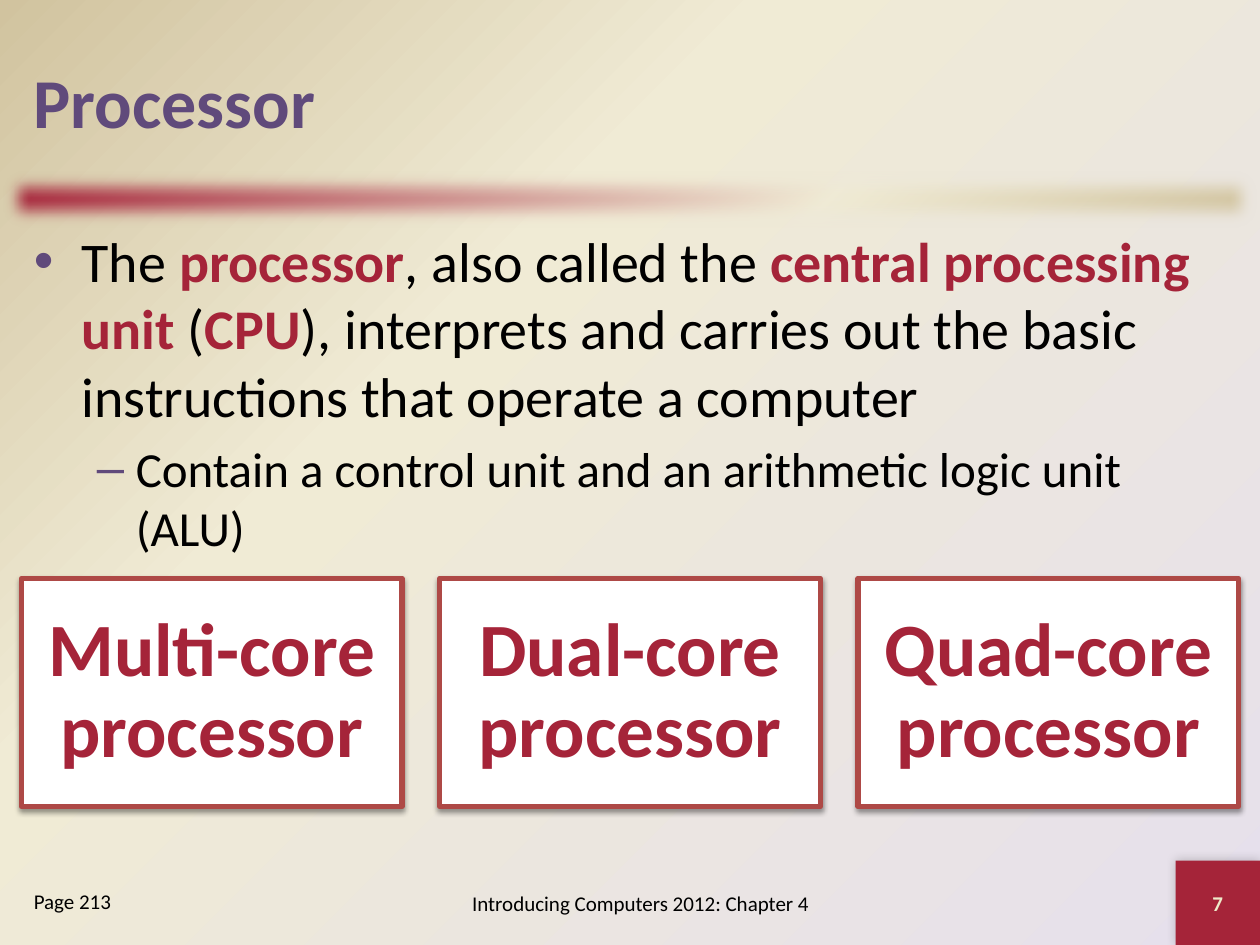
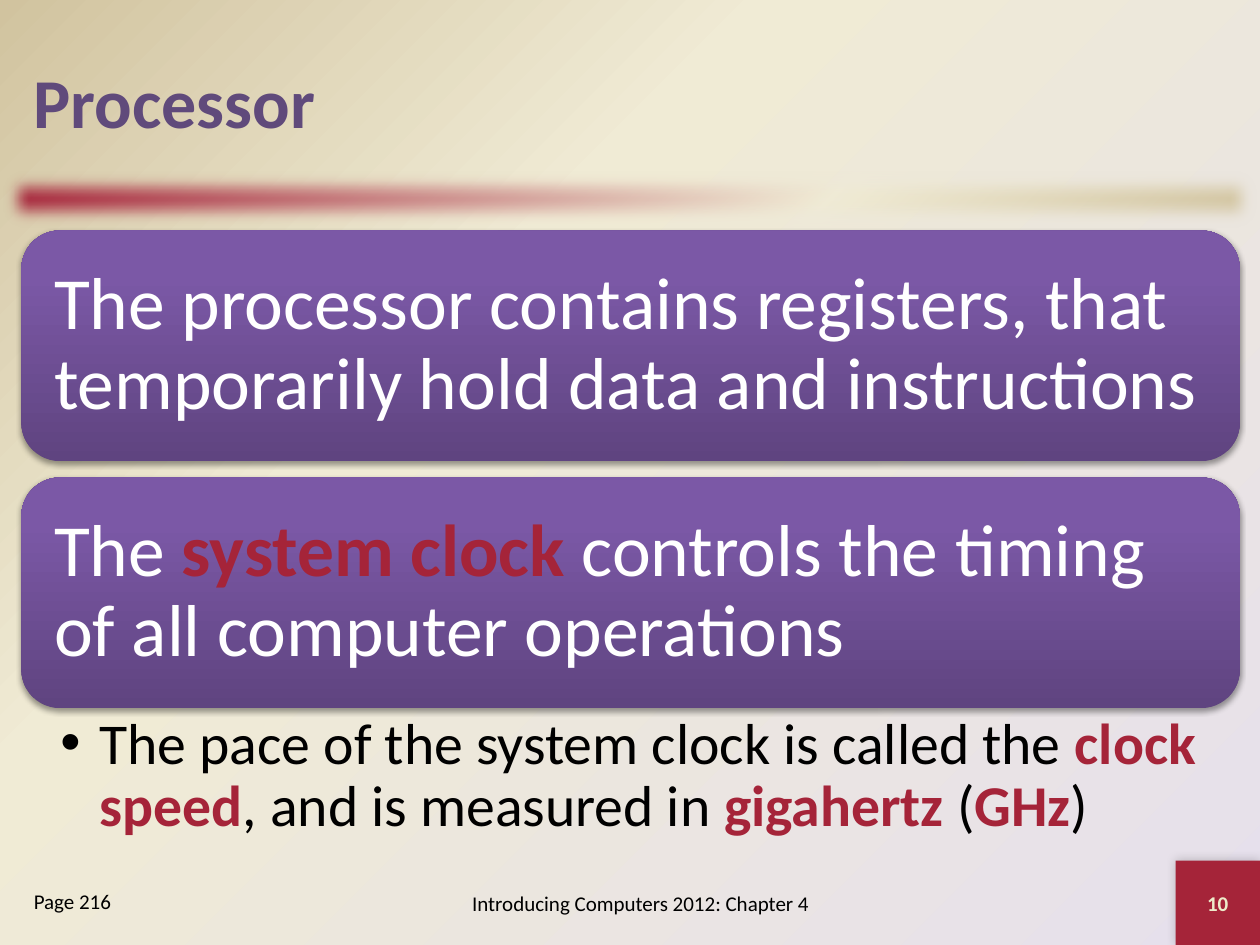
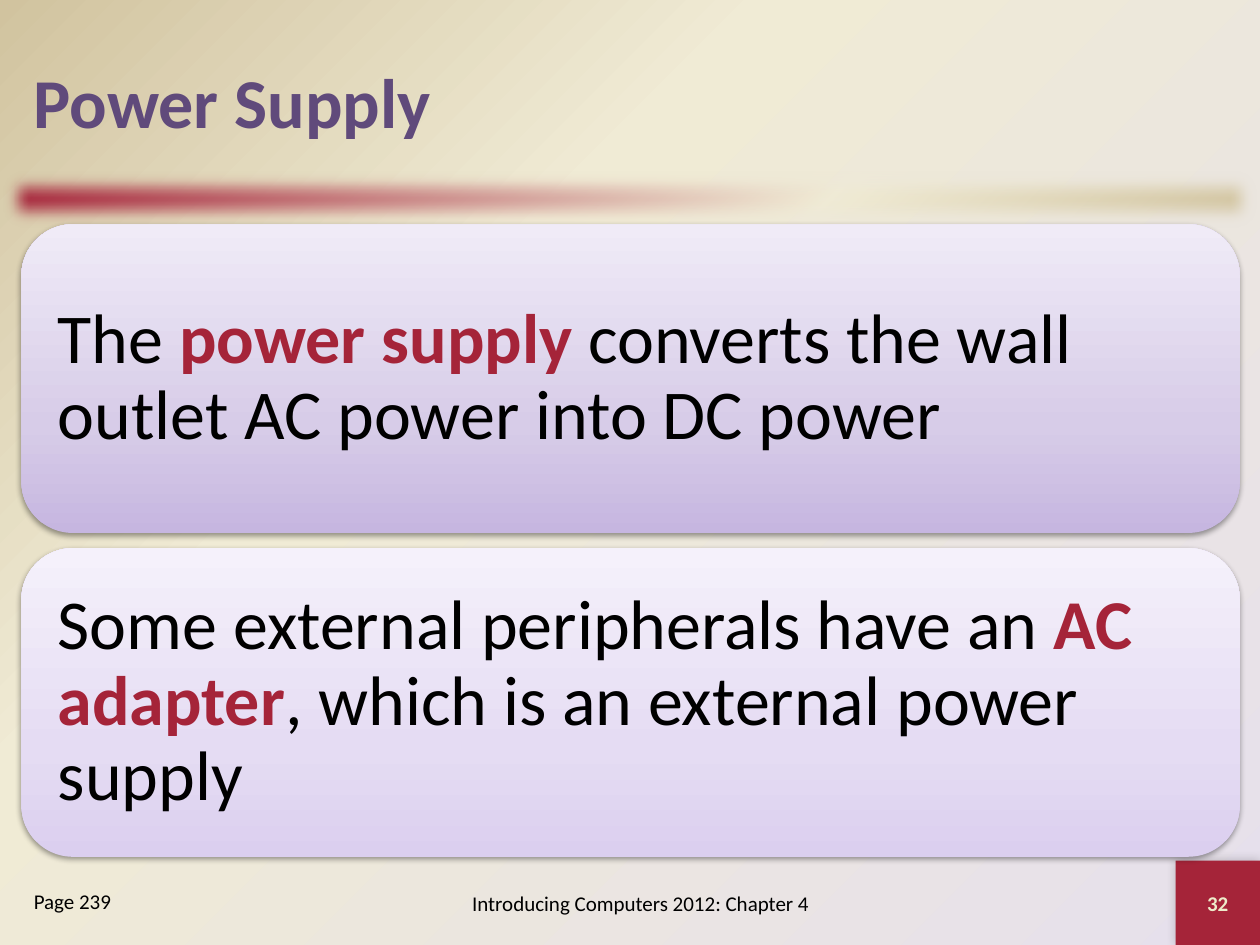
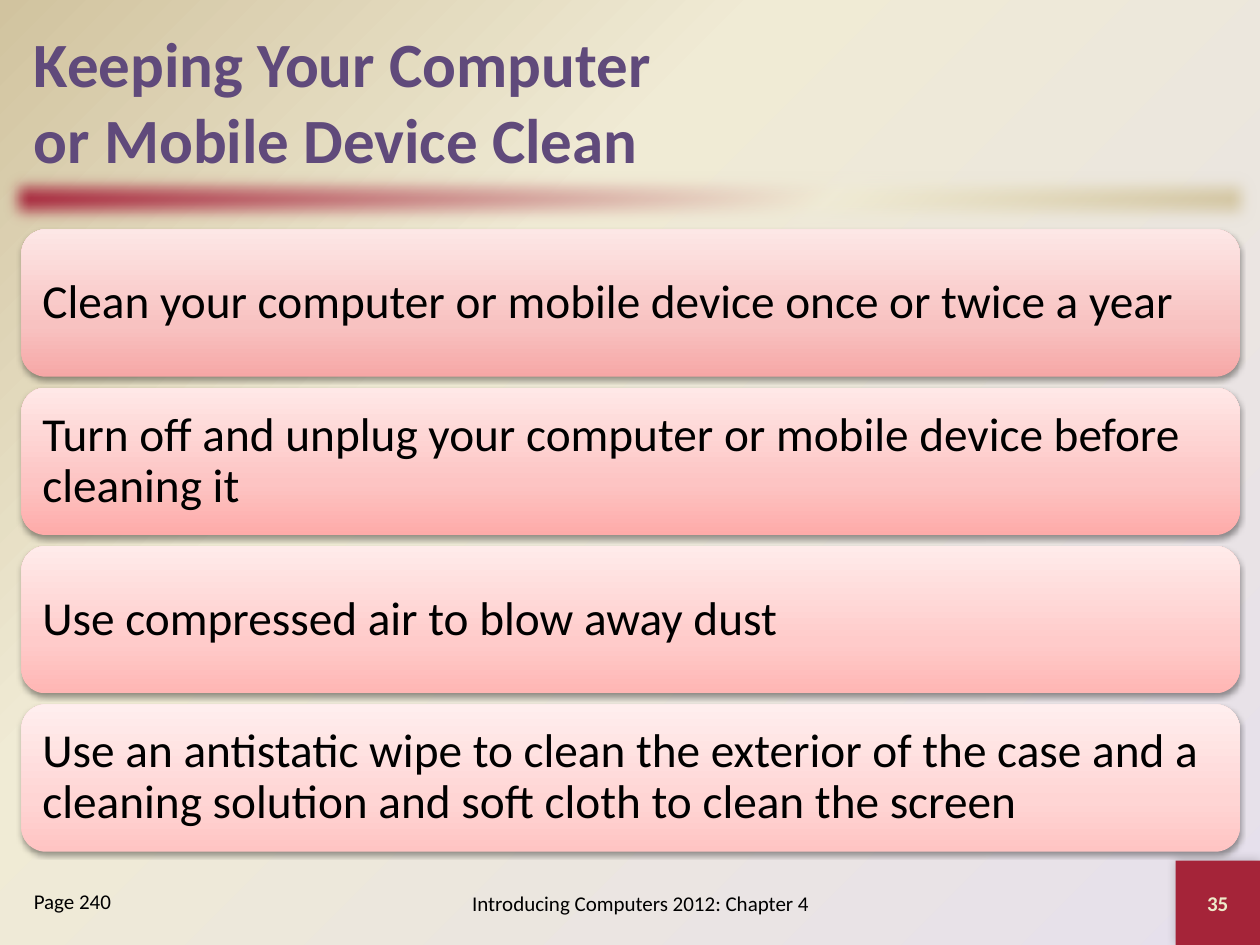
from dataclasses import dataclass

from lxml import etree
from pptx import Presentation
from pptx.dml.color import RGBColor
from pptx.enum.shapes import MSO_SHAPE as SHAPE
from pptx.enum.text import MSO_ANCHOR as ANCHOR, PP_ALIGN as ALIGN
from pptx.oxml import parse_xml
from pptx.oxml.ns import nsdecls, qn
from pptx.util import Inches, Pt


@dataclass(frozen=True)
class Theme:
    """Colours, type sizes and effects used by every slide."""
    font: str = "Calibri"
    plum: str = "604A7B"
    red: str = "A52439"
    brick: str = "AE4946"
    cream: str = "EEEBCA"
    black: str = "000000"
    white: str = "FFFFFF"
    backdrop: tuple = ((0, "E6E0EC"), (65, "F0EBD5"), (100, "D1C39F"))
    band: tuple = ((0, "A52439"), (65, "F0EBD5"), (100, "D1C39F"))
    purple: tuple = ((0, "5F4480"), (80, "7B58A6"), (100, "7C57A8"))
    lilacs: tuple = (((0, "C6B6E0"), (35, "D7CCE8"), (100, "F0EBF7")),
                     ((0, "DBCFEF"), (35, "E5DCF3"), (100, "F5F1FB")))
    pinks: tuple = (((0, "F6A7A6"), (35, "F8C2C1"), (100, "FDE7E6")),
                    ((0, "FEABA9"), (35, "FDC4C3"), (100, "FFE8E7")),
                    ((0, "FFB6B4"), (35, "FFCBCA"), (100, "FFEBEA")),
                    ((0, "FFC4C3"), (35, "FFD5D4"), (100, "FFEEEE")))
    card_shadow: tuple = (38, 3.1, 1.6, 90)
    number_shadow: tuple = (20, 6, 0, 225)
    title: int = 40
    long_title: int = 36
    body: int = 32
    sub_body: int = 28
    small: int = 12


@dataclass(frozen=True)
class Box:
    """A rectangle in inches."""
    x: float
    y: float
    w: float
    h: float

    def place(self):
        """Return left, top, width and height as lengths."""
        return [Inches(v) for v in (self.x, self.y, self.w, self.h)]

    def rows(self, n, h):
        """Split into n equal rows of height h with equal gaps."""
        step = (self.h - h) / (n - 1)
        return [Box(self.x, self.y + i * step, self.w, h) for i in range(n)]

    def columns(self, n, w):
        """Split into n equal columns of width w with equal gaps."""
        step = (self.w - w) / (n - 1)
        return [Box(self.x + i * step, self.y, w, self.h) for i in range(n)]


T = Theme()
TITLE = Box(0.17, 0.17, 9.67, 1.25)
BAND = Box(0, 1.33, 10, 0.5)
BODY = Box(0.17, 1.75, 9.67, 5.08)
PAGE = Box(0.17, 7, 1.83, 0.5)
FOOTER = Box(3, 6.92, 4.17, 0.5)
NUMBER = Box(9.33, 6.83, 0.67, 0.67)


def set_gradient(fill, element, stops, direction):
    """Give an element a gradient fill with the stops and direction XML."""
    fill.gradient()
    old = next(element.iter(qn("a:gradFill")))
    marks = "".join(f'<a:gs pos="{pos * 1000}"><a:srgbClr val="{color}"/></a:gs>'
                    for pos, color in stops)
    new = parse_xml(f'<a:gradFill {nsdecls("a")} rotWithShape="1">'
                    f'<a:gsLst>{marks}</a:gsLst>{direction}</a:gradFill>')
    old.getparent().replace(old, new)


def linear(angle):
    """Return the XML for a linear gradient direction."""
    return f'<a:lin ang="{angle * 60000}" scaled="0"/>'


def add_effect(sp, xml):
    """Append one effect to a shape."""
    sp._element.spPr.find(qn("a:effectLst")).append(parse_xml(xml))


def add_shadow(sp, alpha, blur, dist, angle):
    """Give a shape a soft black outer shadow."""
    add_effect(sp, f'<a:outerShdw {nsdecls("a")} blurRad="{Pt(blur)}" dist="{Pt(dist)}" '
                   f'dir="{angle * 60000}" rotWithShape="0"><a:srgbClr val="{T.black}">'
                   f'<a:alpha val="{alpha * 1000}"/></a:srgbClr></a:outerShdw>')


def add_shape(s, box, kind, fill, line=None, angle=270):
    """Add a preset shape with a solid or gradient fill."""
    sp = s.shapes.add_shape(kind, *box.place())
    sp.shadow.inherit = False
    if isinstance(fill, str):
        sp.fill.solid()
        sp.fill.fore_color.rgb = RGBColor.from_string(fill)
    else:
        set_gradient(sp.fill, sp._element, fill, linear(angle))
    if line:
        sp.line.color.rgb = RGBColor.from_string(line)
        sp.line.width = Pt(3)
    else:
        sp.line.fill.background()
    return sp


def set_frame(sp, anchor=ANCHOR.TOP, inset=(0.1, 0.05, 0.1, 0.05)):
    """Set wrapping, anchor and insets, and return the text frame."""
    tf = sp.text_frame
    tf.word_wrap = True
    tf.vertical_anchor = anchor
    tf.margin_left, tf.margin_top, tf.margin_right, tf.margin_bottom = map(Inches, inset)
    return tf


def add_runs(p, text, size, color=T.black, bold=False, align=ALIGN.LEFT, spacing=None):
    """Fill a paragraph; text between asterisks becomes a bold red key term."""
    p.alignment = align
    p.line_spacing = spacing
    for i, part in enumerate(text.split("*")):
        if not part:
            continue
        key = i % 2 == 1
        for j, line in enumerate(part.split("\n")):
            if j:
                p.add_line_break()
            r = p.add_run()
            r.text = line
            r.font.name = T.font
            r.font.size = Pt(size)
            r.font.bold = bold or key
            r.font.color.rgb = RGBColor.from_string(T.red if key else color)


def set_bullet(p, char, left, hang, color):
    """Give a paragraph a coloured bullet with a hanging indent."""
    pPr = p._p.get_or_add_pPr()
    pPr.set("marL", str(Inches(left)))
    pPr.set("indent", str(-Inches(hang)))
    clr = etree.SubElement(pPr, qn("a:buClr"))
    etree.SubElement(clr, qn("a:srgbClr"), val=color)
    etree.SubElement(pPr, qn("a:buFont"), typeface="Arial")
    etree.SubElement(pPr, qn("a:buChar"), char=char)


def add_text(s, box, text, size, anchor=ANCHOR.TOP, **style):
    """Add a one-paragraph text box."""
    tf = set_frame(s.shapes.add_textbox(*box.place()), anchor)
    add_runs(tf.paragraphs[0], text, size, **style)


def set_background(prs):
    """Put the shared radial backdrop on the slide master."""
    master = prs.slide_master
    set_gradient(master.background.fill, master._element, T.backdrop,
                 '<a:path path="circle"><a:fillToRect l="100000" t="100000"/></a:path>'
                 '<a:tileRect r="-100000" b="-100000"/>')


def add_base(prs, title, page, number, size=T.title):
    """Add a slide with its title, band, footer and number."""
    s = prs.slides.add_slide(prs.slide_layouts[6])
    band = add_shape(s, BAND, SHAPE.RECTANGLE, T.band, angle=45)
    add_effect(band, f'<a:softEdge {nsdecls("a")} rad="{Pt(10)}"/>')
    sp = add_shape(s, NUMBER, SHAPE.RECTANGLE, T.red)
    add_shadow(sp, *T.number_shadow)
    add_runs(set_frame(sp, ANCHOR.MIDDLE).paragraphs[0], str(number), T.small,
             T.cream, bold=True, align=ALIGN.CENTER)
    add_text(s, TITLE, title, size, ANCHOR.MIDDLE, color=T.plum, bold=True)
    add_text(s, FOOTER, "Introducing Computers 2012: Chapter 4", T.small,
             ANCHOR.MIDDLE, align=ALIGN.CENTER)
    add_text(s, PAGE, f"Page {page}", T.small)
    return s


def add_body(s, box, point, detail):
    """Add a bulleted point with a dashed detail below it."""
    tf = set_frame(s.shapes.add_textbox(*box.place()))
    levels = ((point, T.body, "•", 0.38, 0.38), (detail, T.sub_body, "–", 0.81, 0.31))
    for i, (text, size, char, left, hang) in enumerate(levels):
        p = tf.add_paragraph() if i else tf.paragraphs[0]
        add_runs(p, text, size)
        p.space_before = Pt(size * 0.2)
        set_bullet(p, char, left, hang, T.plum)


def add_note(s, box, text, size):
    """Add a bulleted note below a stack of panels."""
    tf = set_frame(s.shapes.add_textbox(*box.place()), inset=(0.31, 0.06, 0.33, 0.06))
    p = tf.paragraphs[0]
    add_runs(p, text, size, spacing=0.9)
    set_bullet(p, "•", 0.31, 0.31, T.black)


def add_cards(s, box, labels):
    """Add a row of outlined white cards."""
    for cell, label in zip(box.columns(len(labels), 3.02), labels):
        sp = add_shape(s, cell, SHAPE.RECTANGLE, T.white, T.brick)
        add_shadow(sp, *T.card_shadow)
        tf = set_frame(sp, ANCHOR.MIDDLE, (0.18,) * 4)
        add_runs(tf.paragraphs[0], label, 43, T.red, True, ALIGN.CENTER, 0.9)


def add_panels(s, box, height, texts, fills, size, inset=0.17, color=T.black):
    """Stack rounded gradient panels with one statement each."""
    for row, text, fill in zip(box.rows(len(texts), height), texts, fills):
        sp = add_shape(s, row, SHAPE.ROUNDED_RECTANGLE, fill)
        add_shadow(sp, *T.card_shadow)
        tf = set_frame(sp, ANCHOR.MIDDLE, (inset,) * 4)
        add_runs(tf.paragraphs[0], text, size, color, spacing=0.9)


def build_processor_types(prs):
    """Build the slide that defines the processor."""
    s = add_base(prs, "Processor", 213, 7)
    add_body(s, BODY,
             "The *processor*, also called the *central processing unit *(*CPU*), interprets "
             "and carries out the basic instructions that operate a computer",
             "Contain a control unit and an arithmetic logic unit (ALU)")
    add_cards(s, Box(0.17, 4.59, 9.66, 1.81),
              [f"{cores}-core processor" for cores in ("Multi", "Dual", "Quad")])


def build_system_clock(prs):
    """Build the slide on registers and the system clock."""
    s = add_base(prs, "Processor", 216, 10)
    add_panels(s, Box(0.17, 1.83, 9.67, 3.79), 1.83,
               ["The processor contains registers, that temporarily hold data and instructions",
                "The *system clock *controls the timing of all computer operations"],
               [T.purple] * 2, 42, color=T.white)
    add_note(s, Box(0.17, 5.61, 9.67, 1.14),
             "The pace of the system clock is called the *clock speed*, "
             "and is measured in *gigahertz* (*GHz*)", 33)


def build_power_supply(prs):
    """Build the slide on the power supply."""
    s = add_base(prs, "Power Supply", 239, 32)
    add_panels(s, Box(0.17, 1.78, 9.67, 5.02), 2.45,
               ["The *power supply *converts the wall outlet AC power into DC power",
                "Some external peripherals have an *AC adapter*, "
                "which is an external power supply"],
               T.lilacs, 40)


def build_cleaning(prs):
    """Build the slide on keeping devices clean."""
    s = add_base(prs, "Keeping Your Computer \nor Mobile Device Clean", 240, 35, T.long_title)
    add_panels(s, Box(0.17, 1.82, 9.67, 4.94), 1.17,
               ["Clean your computer or mobile device once or twice a year",
                "Turn off and unplug your computer or mobile device before cleaning it",
                "Use compressed air to blow away dust",
                "Use an antistatic wipe to clean the exterior of the case and a cleaning "
                "solution and soft cloth to clean the screen"],
               T.pinks, 27, inset=0.11)


def main():
    """Build and save the presentation."""
    prs = Presentation()
    prs.slide_width, prs.slide_height = Inches(10), Inches(7.5)
    set_background(prs)
    for build in (build_processor_types, build_system_clock, build_power_supply, build_cleaning):
        build(prs)
    prs.save("out.pptx")


if __name__ == "__main__":
    main()
